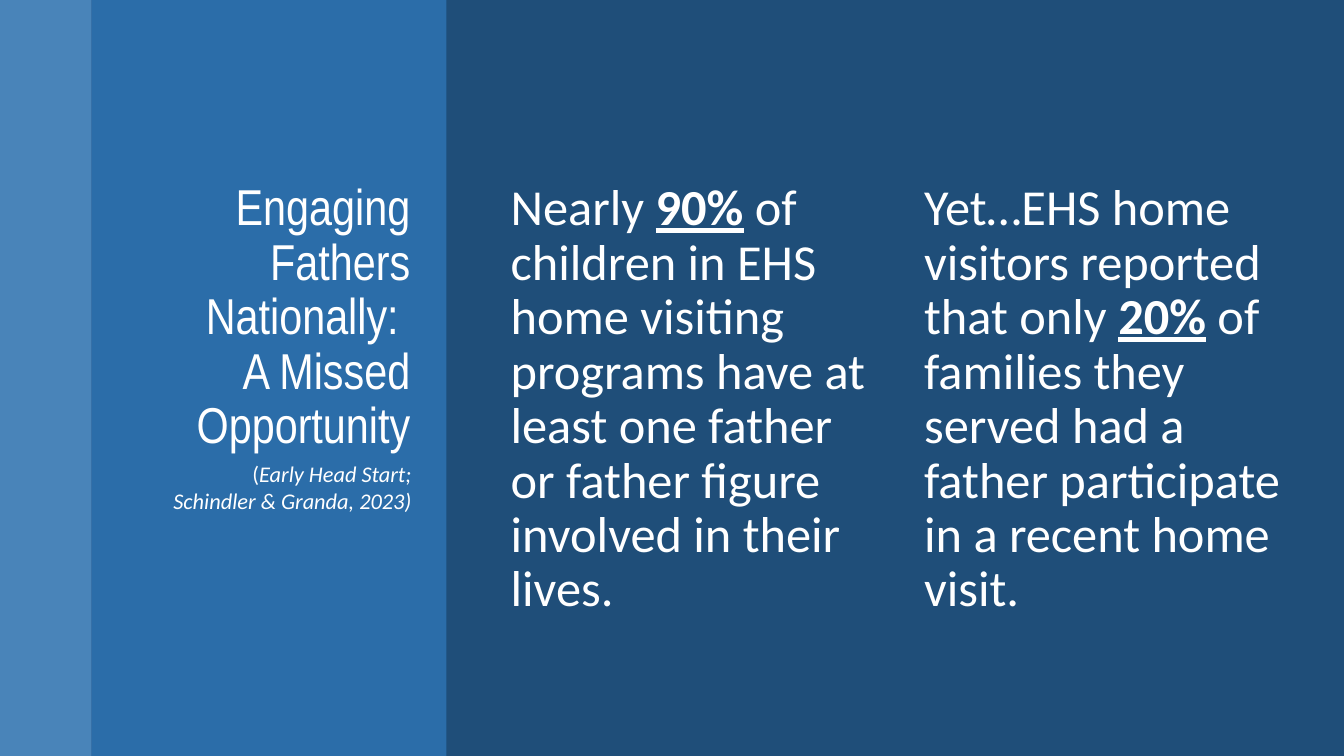
from lxml.etree import SubElement
from pptx import Presentation
from pptx.dml.color import RGBColor
from pptx.enum.shapes import MSO_SHAPE
from pptx.enum.text import MSO_ANCHOR, PP_ALIGN
from pptx.oxml.ns import qn
from pptx.util import Cm, Pt

SLIDE_WIDTH, SLIDE_HEIGHT = 33.87, 19.05
TEXT_TOP = 4.47
WHITE = "FFFFFF"


def paint(fill, color, opacity=100):
    """Give a fill a solid colour with an opacity in percent."""
    fill.solid()
    fill.fore_color.rgb = RGBColor.from_string(color)
    if opacity < 100:
        color_element = fill._xPr.find(qn("a:solidFill"))[0]
        SubElement(color_element, qn("a:alpha"), val=str(opacity * 1000))


def add_band(slide, left, width, color, opacity):
    """Add a translucent vertical band as tall as the slide."""
    band = slide.shapes.add_shape(
        MSO_SHAPE.RECTANGLE, Cm(left), Cm(0), Cm(width), Cm(SLIDE_HEIGHT))
    band.shadow.inherit = False
    band.line.fill.background()
    paint(band.fill, color, opacity)


def add_text(slide, left, top, width, height, pieces, size=36,
             font="Calibri", align=PP_ALIGN.LEFT, line_spacing=0.9):
    """Add a white paragraph from (text, styles) pieces; styles name font flags."""
    frame = slide.shapes.add_textbox(
        Cm(left), Cm(top), Cm(width), Cm(height)).text_frame
    frame.word_wrap = True
    frame.vertical_anchor = MSO_ANCHOR.TOP
    paragraph = frame.paragraphs[0]
    paragraph.alignment = align
    paragraph.line_spacing = line_spacing
    paragraph.font.name = font
    paragraph.font.size = Pt(size)
    paint(paragraph.font.fill, WHITE)
    for text, styles in pieces:
        if text == "\n":
            paragraph.add_line_break()
            continue
        run = paragraph.add_run()
        run.text = text
        for style in styles:
            setattr(run.font, style, True)


def main():
    """Build the slide on father engagement and save it."""
    presentation = Presentation()
    presentation.slide_width = Cm(SLIDE_WIDTH)
    presentation.slide_height = Cm(SLIDE_HEIGHT)
    slide = presentation.slides.add_slide(presentation.slide_layouts[6])
    paint(slide.background.fill, "1F4E79")

    add_band(slide, 0, 2.31, "5B9BD5", 70)
    add_band(slide, 2.31, 8.94, "2E75B6", 80)

    title = [("Engaging Fathers Nationally: ", ()), ("\n", ()),
             ("A Missed Opportunity", ())]
    add_text(slide, 3.68, TEXT_TOP, 6.91, 11.2, title,
             font="Arial Narrow", align=PP_ALIGN.RIGHT)

    findings = [
        (12.62, "Nearly ", "90%",
         " of children in EHS home visiting programs have at least one "
         "father or father figure involved in their lives."),
        (23.04, "Yet…EHS home visitors reported that only ", "20%",
         " of families they served had a father participate in a recent "
         "home visit."),
    ]
    for left, opening, share, ending in findings:
        add_text(slide, left, TEXT_TOP, 9.5, 12.5,
                 [(opening, ()), (share, ("bold", "underline")), (ending, ())])

    citation = [("(", ()),
                ("Early Head Start; Schindler & Granda, 2023)", ("italic",))]
    add_text(slide, 3.99, 11.48, 6.63, 1.63, citation, size=16,
             align=PP_ALIGN.RIGHT, line_spacing=1.0)

    presentation.save("out.pptx")


if __name__ == "__main__":
    main()
